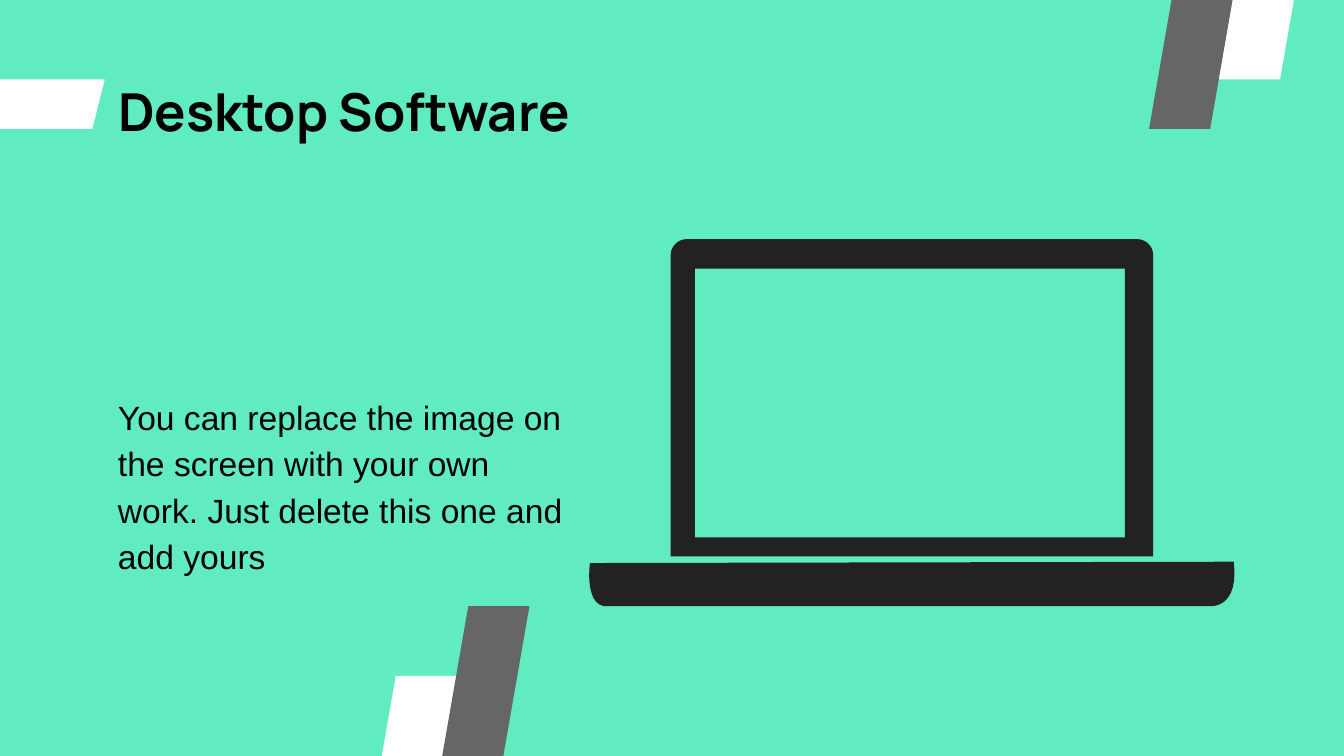
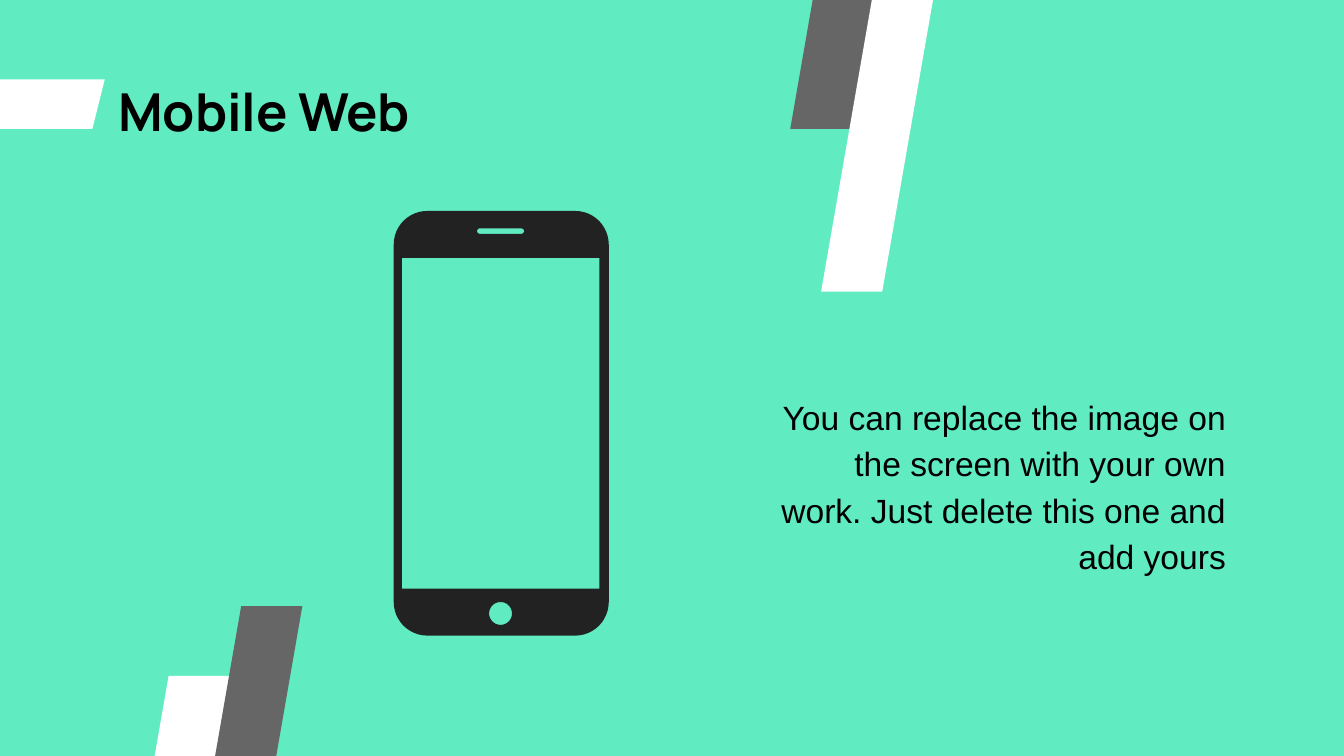
from dataclasses import dataclass
from math import cos, pi, sin

from pptx import Presentation
from pptx.dml.color import RGBColor
from pptx.enum.shapes import MSO_SHAPE as Preset
from pptx.enum.text import MSO_ANCHOR as Anchor, MSO_AUTO_SIZE as AutoSize, PP_ALIGN as Align
from pptx.presentation import Presentation as Deck
from pptx.slide import Slide
from pptx.text.text import TextFrame
from pptx.util import Inches, Pt

COLORS = {
    "mint": "61EBC1",
    "white": "FFFFFF",
    "gray": "666666",
    "device": "222222",
    "text": "000000",
}
TITLE_FONT, BODY_FONT = "Manrope", "Arial"
BODY_TEXT = ("You can replace the image on the screen with your own work. "
             "Just delete this one and add yours")
STRIPE_WIDTH, STRIPE_HEIGHT, STRIPE_SLANT = 0.93, 2.73, 0.511
CURVE_STEPS = 12

Point = tuple[float, float]
Outline = list[Point]


@dataclass(frozen=True)
class Stripe:
    left: float
    top: float
    color: str
    width: float = STRIPE_WIDTH
    height: float = STRIPE_HEIGHT
    slant: float = STRIPE_SLANT


@dataclass(frozen=True)
class DevicePage:
    title: str
    body_left: float
    body_align: Align
    device: list[list[Outline]]
    stripes: list[Stripe]


# Outlines
def rounded(left: float, top: float, width: float, height: float,
            upper: float = 0, lower: float = 0) -> Outline:
    """Rectangle with one radius for the upper corners and one for the lower."""
    right, bottom = left + width, top + height
    corners = [
        (left + upper, top + upper, upper, pi),
        (right - upper, top + upper, upper, 1.5 * pi),
        (right - lower, bottom - lower, lower, 0),
        (left + lower, bottom - lower, lower, 0.5 * pi),
    ]
    points: Outline = []
    for x, y, radius, start in corners:
        steps = CURVE_STEPS if radius else 0
        for step in range(steps + 1):
            angle = start + step * pi / 2 / CURVE_STEPS
            points.append((x + radius * cos(angle), y + radius * sin(angle)))
    return points


def curve(*controls: Point) -> Outline:
    """Points along a cubic curve with four control points."""
    points: Outline = []
    for step in range(CURVE_STEPS + 1):
        t = step / CURVE_STEPS
        weights = ((1 - t) ** 3, 3 * t * (1 - t) ** 2, 3 * t ** 2 * (1 - t), t ** 3)
        x, y = (sum(w * c[axis] for w, c in zip(weights, controls)) for axis in (0, 1))
        points.append((x, y))
    return points


LAPTOP_BASE = (
    curve((4.39, 4.19), (4.39, 4.19), (4.35, 4.48), (4.49, 4.51))
    + curve((9.02, 4.51), (9.03, 4.51), (9.22, 4.51), (9.18, 4.18))
)
LAPTOP_LID = [
    rounded(4.99, 1.78, 3.59, 2.36, upper=0.12),
    rounded(5.17, 2, 3.2, 2),
]
PHONE = [
    rounded(2.93, 1.57, 1.6, 3.16, upper=0.25, lower=0.25),
    rounded(3.55, 1.7, 0.35, 0.04, upper=0.02, lower=0.02),
    rounded(3.64, 4.48, 0.17, 0.17, upper=0.085, lower=0.085),
    rounded(2.99, 1.92, 1.47, 2.46),
]

TITLE_BAR = Stripe(-0.15, 0.59, "white", 0.93, 0.37, 0.25)

PAGES = [
    DevicePage("Desktop Software", 0.78, Align.LEFT, [[LAPTOP_BASE], LAPTOP_LID], [
        Stripe(8.55, -1.77, "gray"),
        Stripe(9.07, -2.14, "white"),
        Stripe(2.47, 5.03, "white"),
        Stripe(3.01, 4.51, "gray"),
    ]),
    DevicePage("Mobile Web", 5.62, Align.RIGHT, [PHONE], [
        Stripe(5.88, -1.77, "gray"),
        Stripe(6.11, -0.56, "white"),
        Stripe(0.78, 5.03, "white"),
        Stripe(1.32, 4.51, "gray"),
    ]),
]


# Drawing
def rgb(name: str) -> RGBColor:
    return RGBColor.from_string(COLORS[name])


def paint(shape, color: str) -> None:
    shape.fill.solid()
    shape.fill.fore_color.rgb = rgb(color)
    shape.line.fill.background()
    shape.shadow.inherit = False


def draw_stripe(page: Slide, stripe: Stripe) -> None:
    shape = page.shapes.add_shape(
        Preset.PARALLELOGRAM, Inches(stripe.left), Inches(stripe.top),
        Inches(stripe.width), Inches(stripe.height))
    shape.adjustments[0] = stripe.slant
    paint(shape, stripe.color)


def draw_part(page: Slide, outlines: list[Outline]) -> None:
    """One device part: the first outline is the body, the rest are holes."""
    contours = [[(Inches(x), Inches(y)) for x, y in outline] for outline in outlines]
    builder = page.shapes.build_freeform(*contours[0][0])
    for index, contour in enumerate(contours):
        if index:
            builder.move_to(*contour[0])
        builder.add_line_segments(contour[1:], close=True)
    paint(builder.convert_to_shape(), "device")


def set_text(frame: TextFrame, text: str, font: str, size: float,
             align: Align, spacing: float, bold: bool = False) -> None:
    frame.text = text
    frame.word_wrap = True
    frame.auto_size = AutoSize.NONE
    frame.vertical_anchor = Anchor.TOP
    frame.margin_left = frame.margin_right = Inches(0.1)
    frame.margin_top = frame.margin_bottom = Inches(0.1)
    para = frame.paragraphs[0]
    para.alignment = align
    para.line_spacing = spacing
    span = para.runs[0]
    span.font.name = font
    span.font.size = Pt(size)
    span.font.bold = bold
    span.font.color.rgb = rgb("text")


def draw_page(deck: Deck, content: DevicePage) -> None:
    page = deck.slides.add_slide(deck.slide_layouts.get_by_name("Title Only"))
    page.background.fill.solid()
    page.background.fill.fore_color.rgb = rgb("mint")
    draw_stripe(page, TITLE_BAR)

    # Title and body
    title = page.shapes.title
    title.left, title.top = Inches(0.78), Inches(0.49)
    title.width, title.height = Inches(8.44), Inches(0.63)
    set_text(title.text_frame, content.title, TITLE_FONT, 28, Align.LEFT, 1.0, bold=True)
    box = page.shapes.add_textbox(
        Inches(content.body_left), Inches(2.81), Inches(3.6), Inches(1.2))
    set_text(box.text_frame, BODY_TEXT, BODY_FONT, 18, content.body_align, 1.15)

    # Device and stripes
    for part in content.device:
        draw_part(page, part)
    for stripe in content.stripes:
        draw_stripe(page, stripe)


def main() -> None:
    deck = Presentation()
    deck.slide_width = Inches(10)
    deck.slide_height = Inches(10) * 9 // 16
    for content in PAGES:
        draw_page(deck, content)
    deck.save("out.pptx")


if __name__ == "__main__":
    main()
